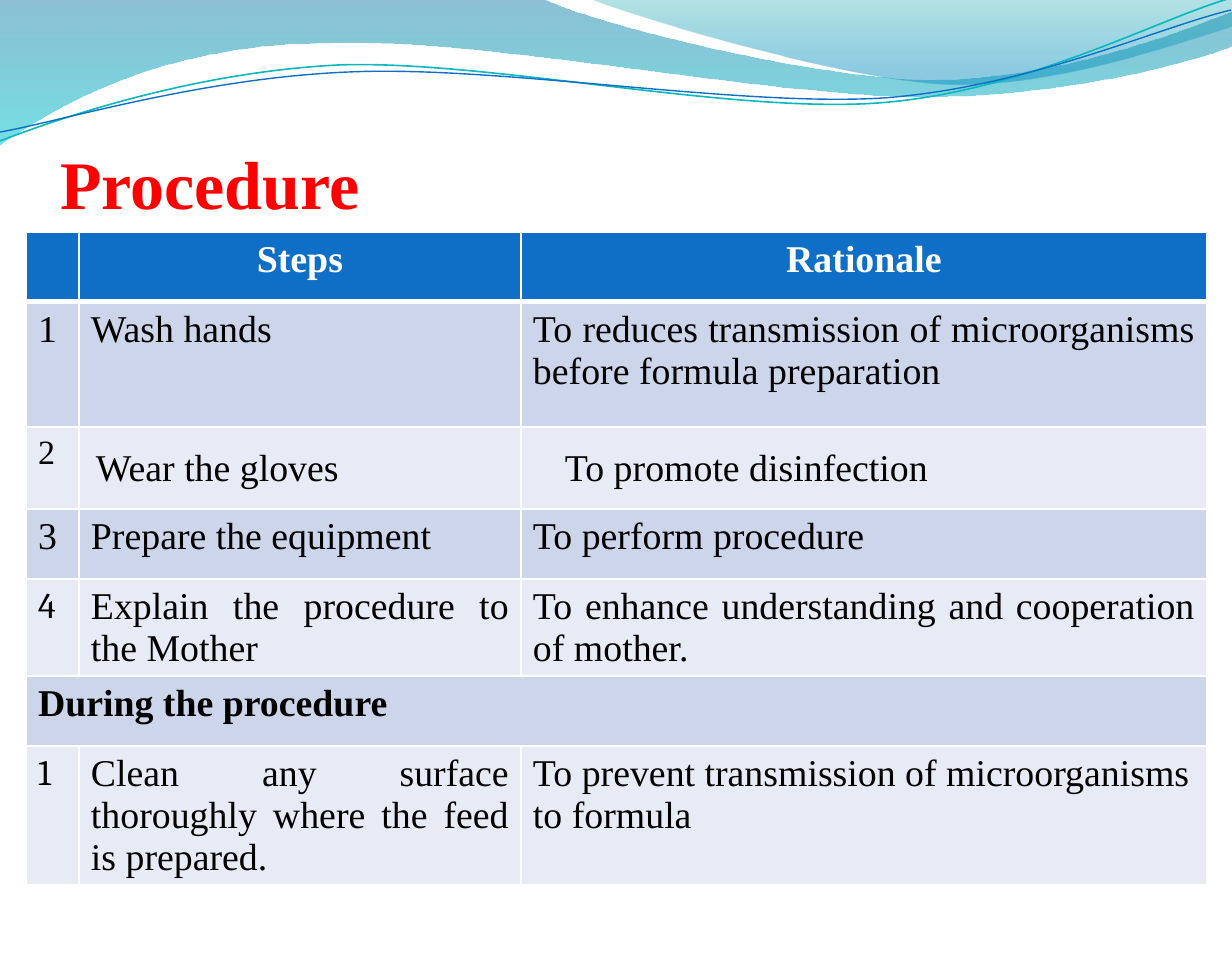
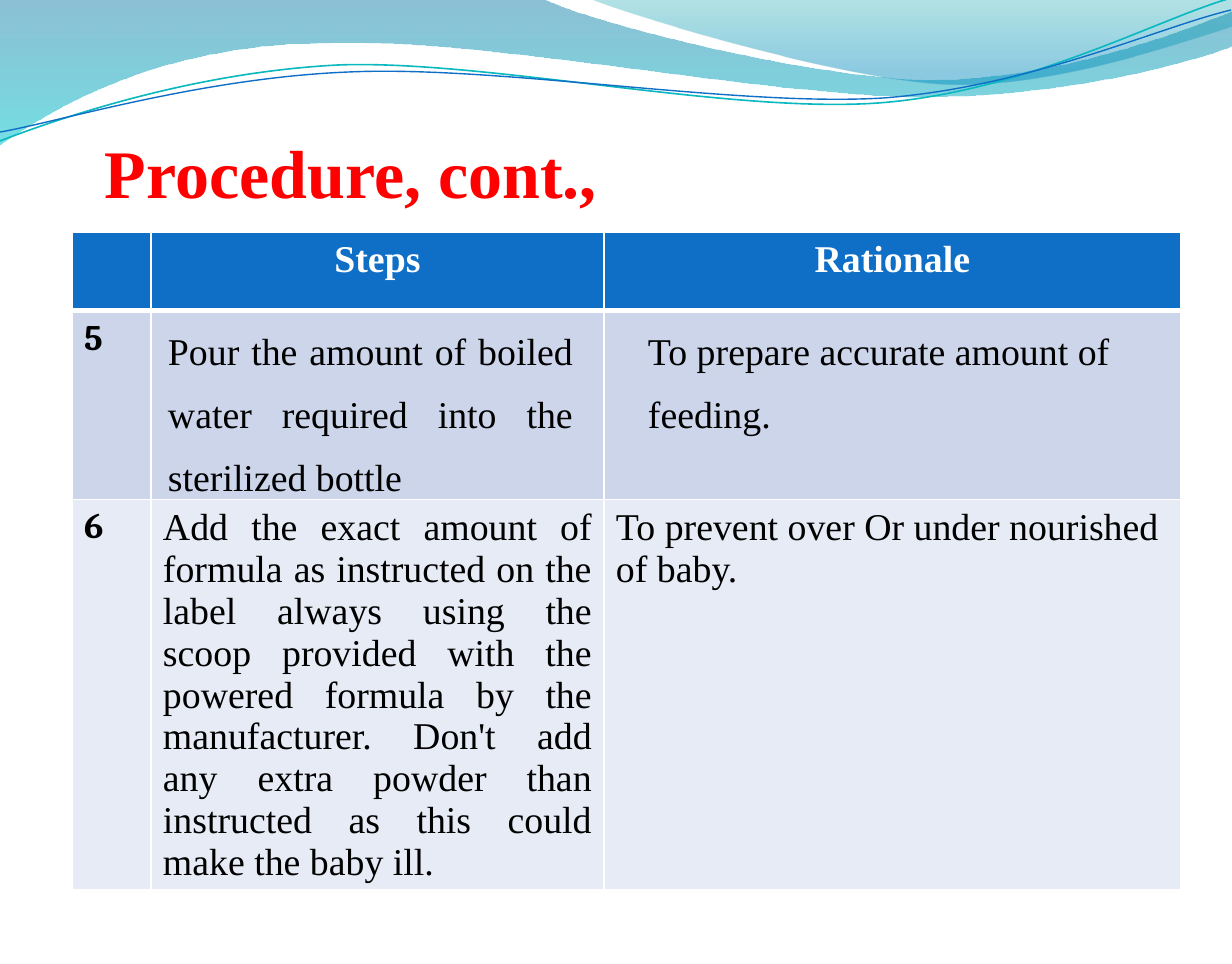
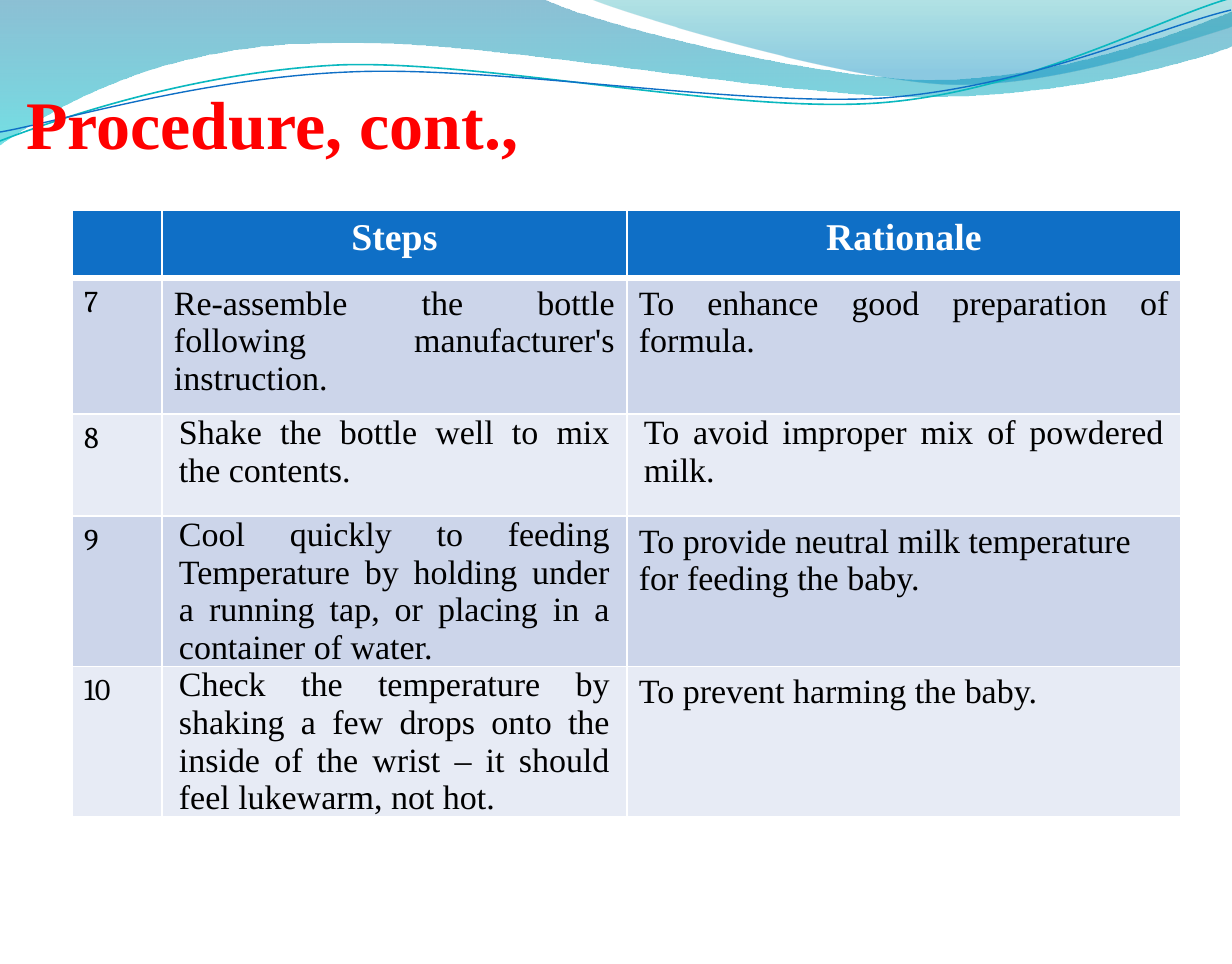
from dataclasses import dataclass

from lxml.etree import SubElement
from pptx import Presentation
from pptx.dml.color import RGBColor
from pptx.enum.text import MSO_ANCHOR as Anchor, MSO_AUTO_SIZE as AutoSize, PP_ALIGN as Align
from pptx.oxml import parse_xml
from pptx.oxml.ns import nsdecls, qn
from pptx.util import Pt

PX = 914400 / 136
SLIDE_W, SLIDE_H = 1232, 964
TITLE_W, TITLE_H = 1108, 160
SERIF, NUMERAL = "Times New Roman", "Cambria"
RED, BLUE, TEAL = "FF0000", "0F6FC6", "0AB8BF"
WHITE, BLACK = "FFFFFF", "000000"
BANDS = ("CCD5EA", "E7EBF5")

BROAD_WAVE = [
    [(0, 0)], [(543, -1)],
    [(586, 22), (817, 80), (934, 80)],
    [(1051, 80), (1180, 33), (1232, 11)],
    [(1232, 46)],
    [(1211, 56), (1072, 98), (918, 97)],
    [(766, 97), (471, 35), (317, 44)],
    [(159, 46), (57, 106), (-1, 146)],
    [(0, 0)],
]
RIGHT_WAVE = [
    [(590, -1)],
    [(627, 15), (840, 79), (947, 84)],
    [(1054, 88), (1185, 41), (1232, 27)],
    [(1232, 0)],
    [(590, -1)],
]
TEAL_THREAD = [
    [(0, 141)],
    [(60, 118), (194, 72), (340, 65)],
    [(487, 60), (730, 114), (879, 103)],
    [(1025, 92), (1156, 20), (1228, -1)],
]
BLUE_THREAD = [
    [(0, 132)],
    [(58, 122), (201, 78), (348, 72)],
    [(496, 65), (736, 107), (883, 98)],
    [(1030, 87), (1159, 27), (1231, 10)],
]


@dataclass
class Entry:
    text: str
    size: float = 20
    font: str = SERIF
    bold: bool = False
    align: Align = Align.JUSTIFY
    inset: bool = False
    spacing: float = 1.0
    indent: int = 0
    right_indent: int = 0


def px(length):
    return round(length * PX)


def rgb(value):
    return RGBColor.from_string(value)


def bend_segments(curve, segments):
    lines = iter(list(curve._element.iter(qn("a:lnTo"))))
    for segment in segments[1:]:
        parts = [next(lines) for _ in segment]
        if len(parts) == 3:
            bend = parse_xml(f'<a:cubicBezTo {nsdecls("a")}/>')
            parts[0].addprevious(bend)
            for part in parts:
                bend.append(part[0])
                part.getparent().remove(part)


def add_curve(slide, segments, close):
    start, *rest = [(px(x), px(y)) for segment in segments for x, y in segment]
    builder = slide.shapes.build_freeform(*start)
    builder.add_line_segments(rest, close=close)
    curve = builder.convert_to_shape()
    bend_segments(curve, segments)
    curve.shadow.inherit = False
    return curve


def add_wave(slide, segments, stops):
    wave = add_curve(slide, segments, True)
    wave.line.fill.background()
    wave.fill.gradient()
    wave.fill.gradient_angle = 270
    for stop, (position, color, _) in zip(wave.fill.gradient_stops, stops):
        stop.position = position
        stop.color.rgb = rgb(color)
    tints = wave._element.spPr.iter(qn("a:srgbClr"))
    for tint, (_, _, opacity) in zip(list(tints), stops):
        SubElement(tint, qn("a:alpha"), val=str(opacity * 1000))
    return wave


def add_thread(slide, segments, color, width):
    thread = add_curve(slide, segments, False)
    thread.fill.background()
    thread.line.color.rgb = rgb(color)
    thread.line.width = Pt(width)
    return thread


def decorate_layout(layout, slide):
    decorations = [
        add_wave(slide, BROAD_WAVE, [(0, "0074A1", 45), (1, "00C6CF", 55)]),
        add_wave(slide, RIGHT_WAVE, [(0, "00A1A9", 30), (0.8, "008BBF", 45)]),
        add_thread(slide, TEAL_THREAD, TEAL, 0.85),
        add_thread(slide, BLUE_THREAD, BLUE, 0.75),
    ]
    for order, decoration in enumerate(decorations):
        decoration._element.nvSpPr.cNvPr.set("id", str(100 + order))
        layout.shapes._spTree.insert(2 + order, decoration._element)


def style_runs(paragraph, size, font, color, bold):
    for run in paragraph.runs:
        run.font.size = Pt(size)
        run.font.name = font
        run.font.bold = bold
        run.font.color.rgb = rgb(color)


def set_title(slide, text, left, top):
    title = slide.shapes.title
    title.left, title.top = px(left), px(top)
    title.width, title.height = px(TITLE_W), px(TITLE_H)
    frame = title.text_frame
    frame.text = text
    frame.auto_size = AutoSize.NONE
    frame.vertical_anchor = Anchor.BOTTOM
    frame.margin_left = frame.margin_right = frame.margin_bottom = 0
    paragraph = frame.paragraphs[0]
    paragraph.alignment = Align.LEFT
    style_runs(paragraph, 36, SERIF, RED, True)


def set_borders(cell, bottom_width):
    properties = cell._tc.get_or_add_tcPr()
    for order, side in enumerate("LRTB"):
        width = Pt(bottom_width if side == "B" else 1)
        properties.insert(order, parse_xml(
            f'<a:ln{side} {nsdecls("a")} w="{width}"><a:solidFill>'
            f'<a:srgbClr val="{WHITE}"/></a:solidFill></a:ln{side}>'))


def fill_cell(cell, entry, background, color, bottom_width):
    cell.fill.solid()
    cell.fill.fore_color.rgb = rgb(background)
    set_borders(cell, bottom_width)
    across, above, below = (17, 0, 0) if entry.inset else (12, 7, 6)
    cell.margin_left = px(across + entry.indent)
    cell.margin_right = px(across + entry.right_indent)
    cell.margin_top, cell.margin_bottom = px(above), px(below)
    cell.text_frame.text = entry.text
    paragraph = cell.text_frame.paragraphs[0]
    paragraph.alignment = entry.align
    paragraph.line_spacing = entry.spacing
    style_runs(paragraph, entry.size, entry.font, color, entry.bold)


def add_steps_table(slide, left, top, widths, heights, steps):
    header = [Entry(text, bold=True, align=Align.CENTER) for text in ("", "Steps", "Rationale")]
    table = slide.shapes.add_table(
        len(heights), len(widths), px(left), px(top), px(sum(widths)), px(sum(heights))).table
    for column, width in zip(table.columns, widths):
        column.width = px(width)
    for row, height in zip(table.rows, heights):
        row.height = px(height)
    for index, entries in enumerate([header, *steps]):
        look = (BANDS[(index - 1) % 2], BLACK, 1) if index else (BLUE, WHITE, 3)
        if len(entries) == 1:
            table.cell(index, 0).merge(table.cell(index, len(widths) - 1))
        for column, entry in enumerate(entries):
            fill_cell(table.cell(index, column), entry, *look)


def numeral(text, size=19, bold=False):
    return Entry(text, size, NUMERAL, bold, Align.LEFT)


def spaced(text, **options):
    return Entry(text, inset=True, spacing=1.5, **options)


def left_aligned(text, size=20):
    return Entry(text, size, align=Align.LEFT)


def small(text, inset=False):
    return Entry(text, 18, inset=inset)


FIRST_STEPS = [
    [Entry("1"), Entry("Wash hands"),
     Entry("To reduces transmission of microorganisms before formula preparation")],
    [small("2"), spaced("Wear the gloves"), spaced("To promote disinfection", indent=27)],
    [Entry("3"), Entry("Prepare the equipment"), Entry("To perform procedure")],
    [numeral("4"), Entry("Explain the procedure to the Mother"),
     Entry("To enhance understanding and cooperation of mother.")],
    [Entry("During the procedure", bold=True)],
    [numeral("1"), Entry("Clean any surface thoroughly where the feed is prepared."),
     left_aligned("To prevent transmission of microorganisms to formula")],
]
FORMULA_STEPS = [
    [numeral("5", bold=True),
     spaced("Pour the amount of boiled water required into the sterilized bottle",
            right_indent=14),
     spaced("To prepare accurate amount of feeding.", indent=27, align=Align.LEFT)],
    [numeral("6", bold=True),
     Entry("Add the exact amount of formula as instructed on the label always using the scoop "
           "provided with the powered formula by the manufacturer. Don't add any extra powder "
           "than instructed as this could make the baby ill."),
     left_aligned("To prevent over Or under nourished of baby.")],
]
BOTTLE_STEPS = [
    [numeral("7", 16), small("Re-assemble the bottle following manufacturer's instruction."),
     small("To enhance good preparation of formula.")],
    [numeral("8", 16), small("Shake the bottle well to mix the contents.", True),
     small("To avoid improper mix of powdered milk.", True)],
    [numeral("9", 16),
     small("Cool quickly to feeding Temperature by holding under a running tap, "
           "or placing in a container of water.", True),
     left_aligned("To provide neutral milk temperature for feeding the baby.", 18)],
    [numeral("10", 16),
     small("Check the temperature by shaking a few drops onto the inside of the wrist "
           "– it should feel lukewarm, not hot.", True),
     left_aligned("To prevent harming the baby.", 18)],
]
PAGES = [
    (("Procedure", 60, 63),
     (26, 232, (53, 442, 686), (70, 125, 82, 70, 97, 70, 138), FIRST_STEPS)),
    (("Procedure, cont.,", 105, 52),
     (72, 232, (79, 453, 577), (79, 188, 390), FORMULA_STEPS)),
    (("Procedure, cont.,", 26, 3),
     (72, 210, (90, 465, 554), (68, 136, 102, 150, 150), BOTTLE_STEPS)),
]


def main():
    deck = Presentation()
    deck.slide_width, deck.slide_height = px(SLIDE_W), px(SLIDE_H)
    title_only = deck.slide_layouts[5]
    for title, steps_table in PAGES:
        slide = deck.slides.add_slide(title_only)
        if len(deck.slides) == 1:
            decorate_layout(title_only, slide)
        set_title(slide, *title)
        add_steps_table(slide, *steps_table)
    deck.save("out.pptx")


if __name__ == "__main__":
    main()
